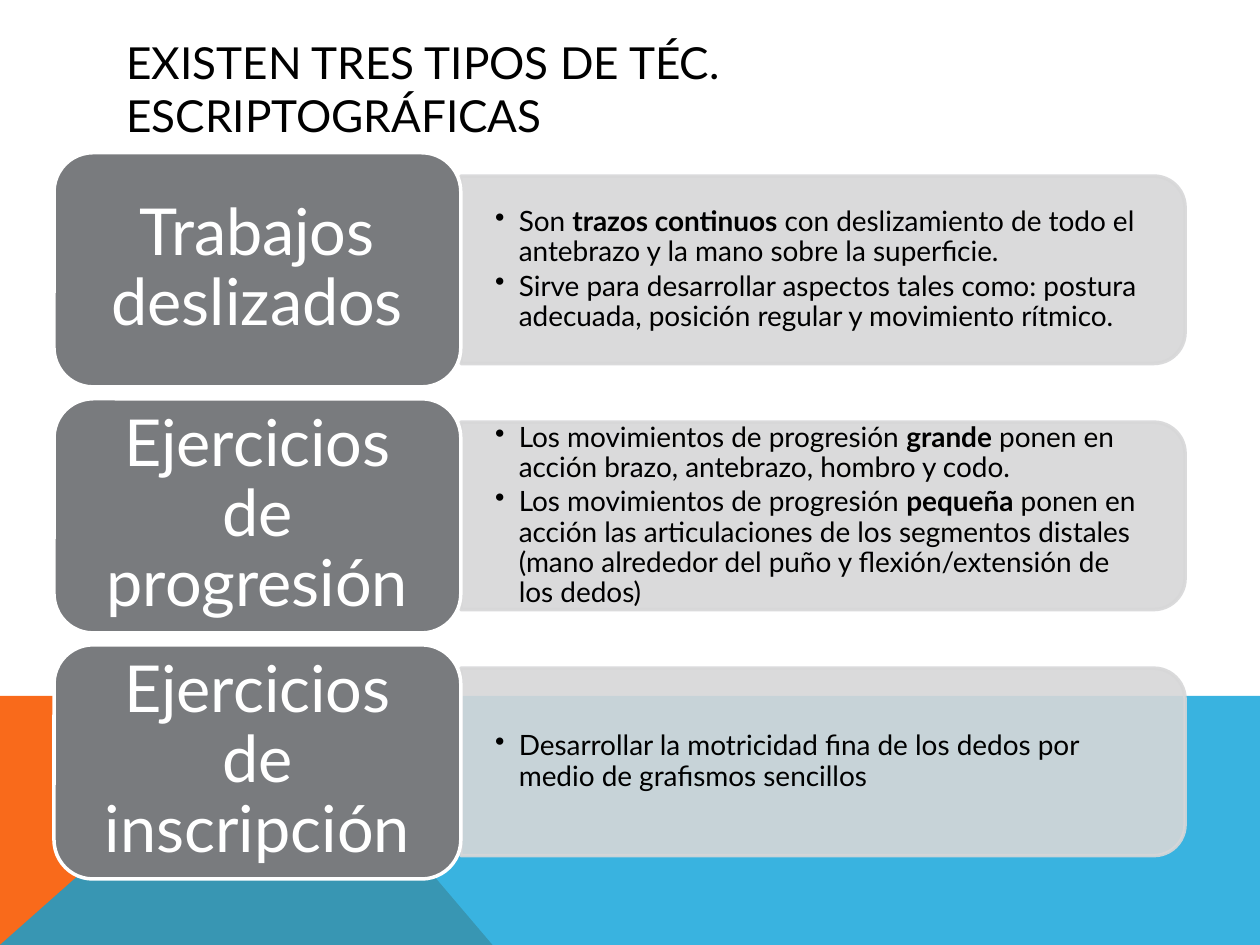
from dataclasses import dataclass

from lxml.etree import SubElement
from pptx import Presentation
from pptx.dml.color import RGBColor
from pptx.enum.shapes import MSO_SHAPE as Preset
from pptx.enum.text import MSO_ANCHOR as Anchor, MSO_AUTO_SIZE as AutoSize, PP_ALIGN as Align
from pptx.oxml.ns import qn
from pptx.util import Cm, Pt

FONT = "Lato"
BLACK = RGBColor(0x00, 0x00, 0x00)
WHITE = RGBColor(0xFF, 0xFF, 0xFF)
ORANGE = RGBColor(0xF9, 0x6A, 0x1B)
BLUE = RGBColor(0x08, 0xA1, 0xD9)
DARK_GRAY = RGBColor(0x79, 0x7B, 0x7E)
LIGHT_GRAY = RGBColor(0xD7, 0xD7, 0xD8)

# Row grid, in centimetres
FIRST_TOP, ROW_STEP = 3.08, 4.96
HEADING_LEFT, HEADING_WIDTH, HEADING_HEIGHT = 1.09, 8.2, 4.72
PANEL_LEFT, PANEL_WIDTH, PANEL_HEIGHT = 9.29, 14.6, 3.78
LIST_WIDTH, LIST_HEIGHT = 14.4, 3.4
BULLET_INDENT = 0.48


@dataclass
class Technique:
    heading: str
    points: list[str]  # ** marks the bold words


TECHNIQUES = [
    Technique("Trabajos deslizados", [
        "Son **trazos continuos** con deslizamiento de todo el antebrazo y la mano "
        "sobre la superficie.",
        "Sirve para desarrollar aspectos tales como: postura adecuada, posición regular "
        "y movimiento rítmico.",
    ]),
    Technique("Ejercicios de progresión", [
        "Los movimientos de progresión **grande** ponen en acción brazo, antebrazo, "
        "hombro y codo.",
        "Los movimientos de progresión **pequeña** ponen en acción las articulaciones de "
        "los segmentos distales (mano alrededor del puño y flexión/extensión de los dedos)",
    ]),
    Technique("Ejercicios de inscripción", [
        "Desarrollar la motricidad fina de los dedos por medio de grafismos sencillos",
    ]),
]


def set_alpha(fill_format_parent, percent: int) -> None:
    """Make every solid colour below the given element partly transparent."""
    for color in fill_format_parent.iter(qn("a:srgbClr")):
        SubElement(color, qn("a:alpha"), val=str(percent * 1000))


def paint(shape, fill: RGBColor, line: RGBColor | None = None, alpha: int = 100) -> None:
    shape.shadow.inherit = False
    shape.fill.solid()
    shape.fill.fore_color.rgb = fill
    if line is None:
        shape.line.fill.background()
    else:
        shape.line.color.rgb = line
        shape.line.width = Pt(2)
    if alpha < 100:
        set_alpha(shape.fill._xPr, alpha)


def add_bullet(paragraph) -> None:
    properties = paragraph._p.get_or_add_pPr()
    properties.set("marL", str(Cm(BULLET_INDENT)))
    properties.set("indent", str(-Cm(BULLET_INDENT)))
    SubElement(properties, qn("a:buChar"), char="•")


def write_text(frame, paragraphs: list[str], *, size: float, color: RGBColor,
               align: Align = Align.LEFT, spacing: float = 0.9, after: float = 0,
               bullets: bool = False, inset_x: float = 0.25, inset_y: float = 0.13) -> None:
    frame.word_wrap = True
    frame.auto_size = AutoSize.NONE
    frame.vertical_anchor = Anchor.MIDDLE
    frame.margin_left = frame.margin_right = Cm(inset_x)
    frame.margin_top = frame.margin_bottom = Cm(inset_y)
    for index, text in enumerate(paragraphs):
        paragraph = frame.paragraphs[0] if index == 0 else frame.add_paragraph()
        paragraph.alignment = align
        paragraph.line_spacing = spacing
        paragraph.space_before = Pt(0)
        paragraph.space_after = Pt(after)
        if bullets:
            add_bullet(paragraph)
        for part, words in enumerate(text.split("**")):
            run = paragraph.add_run()
            run.text = words
            run.font.name = FONT
            run.font.size = Pt(size)
            run.font.bold = part % 2 == 1
            run.font.color.rgb = color


def add_polygon(slide, points: list[tuple[float, float]], fill: RGBColor, alpha: int = 100) -> None:
    corners = [(Cm(x), Cm(y)) for x, y in points]
    builder = slide.shapes.build_freeform(*corners[0], scale=1.0)
    builder.add_line_segments(corners[1:], close=True)
    paint(builder.convert_to_shape(), fill, alpha=alpha)


def add_technique(slide, technique: Technique, top: float) -> None:
    middle = top + HEADING_HEIGHT / 2

    # Panel: a shape with two round top corners, turned to the right
    panel = slide.shapes.add_shape(
        Preset.ROUND_2_SAME_RECTANGLE,
        Cm(PANEL_LEFT + (PANEL_WIDTH - PANEL_HEIGHT) / 2), Cm(middle - PANEL_WIDTH / 2),
        Cm(PANEL_HEIGHT), Cm(PANEL_WIDTH))
    panel.rotation = 90
    paint(panel, LIGHT_GRAY, LIGHT_GRAY, alpha=90)
    set_alpha(panel.line._ln, 90)

    points = slide.shapes.add_textbox(Cm(PANEL_LEFT), Cm(middle - LIST_HEIGHT / 2),
                                      Cm(LIST_WIDTH), Cm(LIST_HEIGHT))
    write_text(points.text_frame, technique.points, size=16, color=BLACK, after=2.4,
               bullets=True, inset_x=0.69, inset_y=0.34)

    heading = slide.shapes.add_shape(Preset.ROUNDED_RECTANGLE, Cm(HEADING_LEFT), Cm(top),
                                     Cm(HEADING_WIDTH), Cm(HEADING_HEIGHT))
    paint(heading, DARK_GRAY, WHITE)
    write_text(heading.text_frame, [technique.heading], size=37, color=WHITE,
               align=Align.CENTER, inset_x=0.38, inset_y=0.2)


def main() -> None:
    presentation = Presentation()
    presentation.slide_width, presentation.slide_height = Cm(25.4), Cm(19.05)
    slide = presentation.slides.add_slide(presentation.slide_layouts[5])

    # Coloured base
    add_polygon(slide, [(0, 19.05), (0, 14.03), (5.66, 14.03), (9.93, 19.05)], ORANGE)
    add_polygon(slide, [(0, 19.05), (5.66, 14.03), (25.4, 14.03), (25.4, 19.05)], BLUE, alpha=80)

    # Title
    title = slide.shapes.title
    title.left, title.top, title.width, title.height = Cm(2.3), Cm(1.02), Cm(20.88), Cm(1.52)
    write_text(title.text_frame, ["EXISTEN TRES TIPOS DE TÉC. ESCRIPTOGRÁFICAS"],
               size=25.2, color=BLACK, spacing=1)

    # One row per technique
    for row, technique in enumerate(TECHNIQUES):
        add_technique(slide, technique, FIRST_TOP + row * ROW_STEP)

    presentation.save("out.pptx")


if __name__ == "__main__":
    main()
